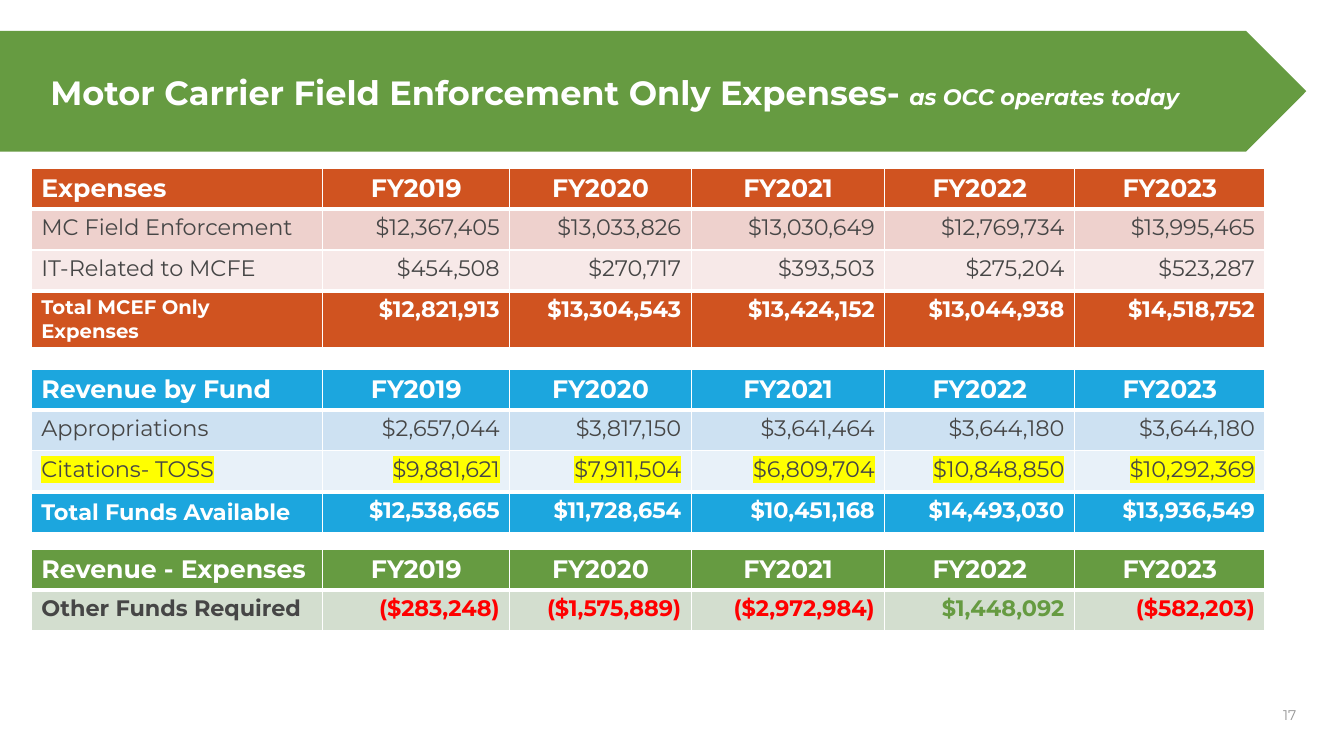
import pptx
import pptx.util
import pptx.dml.color
import pptx.enum.shapes
import pptx.enum.text
import pptx.oxml
import pptx.oxml.ns

Cm = pptx.util.Cm
Pt = pptx.util.Pt
ALIGN = pptx.enum.text.PP_ALIGN
ANCHOR = pptx.enum.text.MSO_ANCHOR

TITLE = "Motor Carrier Field Enforcement Only Expenses- "
SUBTITLE = "as OCC operates today"
PAGE = "17"
YEARS = ["FY2019", "FY2020", "FY2021", "FY2022", "FY2023"]

# Row: (kind, label, yearly values)
TABLES = [
    dict(top=4.24, accent="D05320", bands=["EED1CD", "F7E9E8"], rows=[
        ("header", "Expenses", YEARS),
        ("body", "MC Field Enforcement",
         ["$12,367,405", "$13,033,826", "$13,030,649", "$12,769,734", "$13,995,465"]),
        ("body", "IT-Related to MCFE",
         ["$454,508", "$270,717", "$393,503", "$275,204", "$523,287"]),
        ("tall total", "Total MCEF Only Expenses",
         ["$12,821,913", "$13,304,543", "$13,424,152", "$13,044,938", "$14,518,752"]),
    ]),
    dict(top=9.3, accent="1CA6DE", bands=["CDE1F2", "E8F1F9"], rows=[
        ("header", "Revenue by Fund", YEARS),
        ("body", "Appropriations",
         ["$2,657,044", "$3,817,150", "$3,641,464", "$3,644,180", "$3,644,180"]),
        ("marked", "Citations- TOSS",
         ["$9,881,621", "$7,911,504", "$6,809,704", "$10,848,850", "$10,292,369"]),
        ("total", "Total Funds Available",
         ["$12,538,665", "$11,728,654", "$10,451,168", "$14,493,030", "$13,936,549"]),
    ]),
    dict(top=13.84, accent="669B41", bands=["D3DECF"], rows=[
        ("header", "Revenue - Expenses", YEARS),
        ("balance", "Other Funds Required",
         ["($283,248)", "($1,575,889)", "($2,972,984)", "$1,448,092", "($582,203)"]),
    ]),
]

THEME = dict(
    font="Montserrat", white="FFFFFF", text="464646", muted="949494", green="669B41",
    red="FF0000", mark="FFFF00",
    title=24, subtitle=16, header=18, body=16, small=14, page=10, rule=1, heavy_rule=3)

TABLE_LEFT = 0.79
COL_WIDTHS = [7.34, 4.72, 4.57, 4.88, 4.78, 4.8]
ROW_HEIGHT, TALL_ROW_HEIGHT = 1.03, 1.42


def rgb(color):
    return pptx.dml.color.RGBColor.from_string(color)


def add_text(p, text, size, color, bold=False, italic=False, mark=None, align=None):
    r = p.add_run()
    r.text = text
    r.font.name = THEME["font"]
    r.font.size = Pt(size)
    r.font.bold = bold
    r.font.italic = italic
    r.font.color.rgb = rgb(color)
    if align is not None:
        p.alignment = align
    if mark:
        highlight = pptx.oxml.parse_xml(
            f'<a:highlight {pptx.oxml.ns.nsdecls("a")}><a:srgbClr val="{mark}"/></a:highlight>')
        r.font.fill  # the highlight has to follow the text fill
        r._r.rPr.find(pptx.oxml.ns.qn("a:solidFill")).addnext(highlight)


def add_box(s, left, top, width, height):
    tf = s.shapes.add_textbox(Cm(left), Cm(top), Cm(width), Cm(height)).text_frame
    tf.word_wrap = True
    tf.vertical_anchor = ANCHOR.MIDDLE
    return tf


def set_borders(cell, **widths):
    """Draw white cell borders; widths are points keyed by L, R, T and B."""
    tcPr = cell._tc.get_or_add_tcPr()
    for side, width in widths.items():
        tcPr.append(pptx.oxml.parse_xml(
            f'<a:ln{side} {pptx.oxml.ns.nsdecls("a")} w="{Pt(width)}"><a:solidFill>'
            f'<a:srgbClr val="{THEME["white"]}"/></a:solidFill></a:ln{side}>'))


def text_format(kind, col, value):
    """Return the run format of a table cell."""
    align = ALIGN.LEFT if col == 0 else ALIGN.RIGHT
    style = dict(size=THEME["body"], color=THEME["text"], align=align)
    if kind == "header":
        style.update(size=THEME["header"], color=THEME["white"], bold=True)
        if col:
            style["align"] = ALIGN.CENTER
    elif "total" in kind:
        style.update(color=THEME["white"], bold=True)
        if kind == "tall total" and col == 0:
            style["size"] = THEME["small"]
    elif kind == "marked":
        style["mark"] = THEME["mark"]
    elif kind == "balance":
        style["bold"] = True
        if col:
            style["color"] = THEME["red" if value.startswith("(") else "green"]
    return style


def add_fund_table(s, top, accent, bands, rows):
    heights = [TALL_ROW_HEIGHT if kind == "tall total" else ROW_HEIGHT for kind, _, _ in rows]
    table = s.shapes.add_table(len(rows), len(COL_WIDTHS), Cm(TABLE_LEFT), Cm(top),
                               Cm(sum(COL_WIDTHS)), Cm(sum(heights))).table
    table.first_row = table.horz_banding = False
    for column, width in zip(table.columns, COL_WIDTHS):
        column.width = Cm(width)

    # Rules above each row and below the last: heavy under headers and over totals
    rules = [THEME["heavy_rule"] if "total" in kind or (i and rows[i - 1][0] == "header")
             else THEME["rule"] for i, (kind, _, _) in enumerate(rows)] + [THEME["rule"]]
    for i, (kind, label, values) in enumerate(rows):
        table.rows[i].height = Cm(heights[i])
        solid = kind == "header" or "total" in kind
        for col, value in enumerate([label] + values):
            cell = table.cell(i, col)
            set_borders(cell, L=THEME["rule"], R=THEME["rule"], T=rules[i], B=rules[i + 1])
            cell.fill.solid()
            cell.fill.fore_color.rgb = rgb(accent if solid else bands[i - 1])
            if kind == "total" and col == 0:
                cell.vertical_anchor = ANCHOR.MIDDLE
            add_text(cell.text_frame.paragraphs[0], value, **text_format(kind, col, value))


def main():
    prs = pptx.Presentation()
    prs.slide_width, prs.slide_height = Cm(33.87), Cm(19.05)
    s = prs.slides.add_slide(prs.slide_layouts[6])

    banner = s.shapes.add_shape(pptx.enum.shapes.MSO_SHAPE.PENTAGON,
                                Cm(0), Cm(0.78), Cm(32.92), Cm(3.04))
    banner.shadow.inherit = False
    banner.fill.solid()
    banner.fill.fore_color.rgb = rgb(THEME["green"])
    banner.line.fill.background()

    tf = add_box(s, 1.27, 1.14, 31.65, 2.34)
    tf.margin_left = 0
    p = tf.paragraphs[0]
    add_text(p, TITLE, THEME["title"], THEME["white"], bold=True)
    add_text(p, SUBTITLE, THEME["subtitle"], THEME["white"], bold=True, italic=True)

    for fund_table in TABLES:
        add_fund_table(s, **fund_table)

    tf = add_box(s, 25.3, 17.73, 7.62, 0.56)
    add_text(tf.paragraphs[0], PAGE, THEME["page"], THEME["muted"], align=ALIGN.RIGHT)

    prs.save("out.pptx")


if __name__ == "__main__":
    main()
